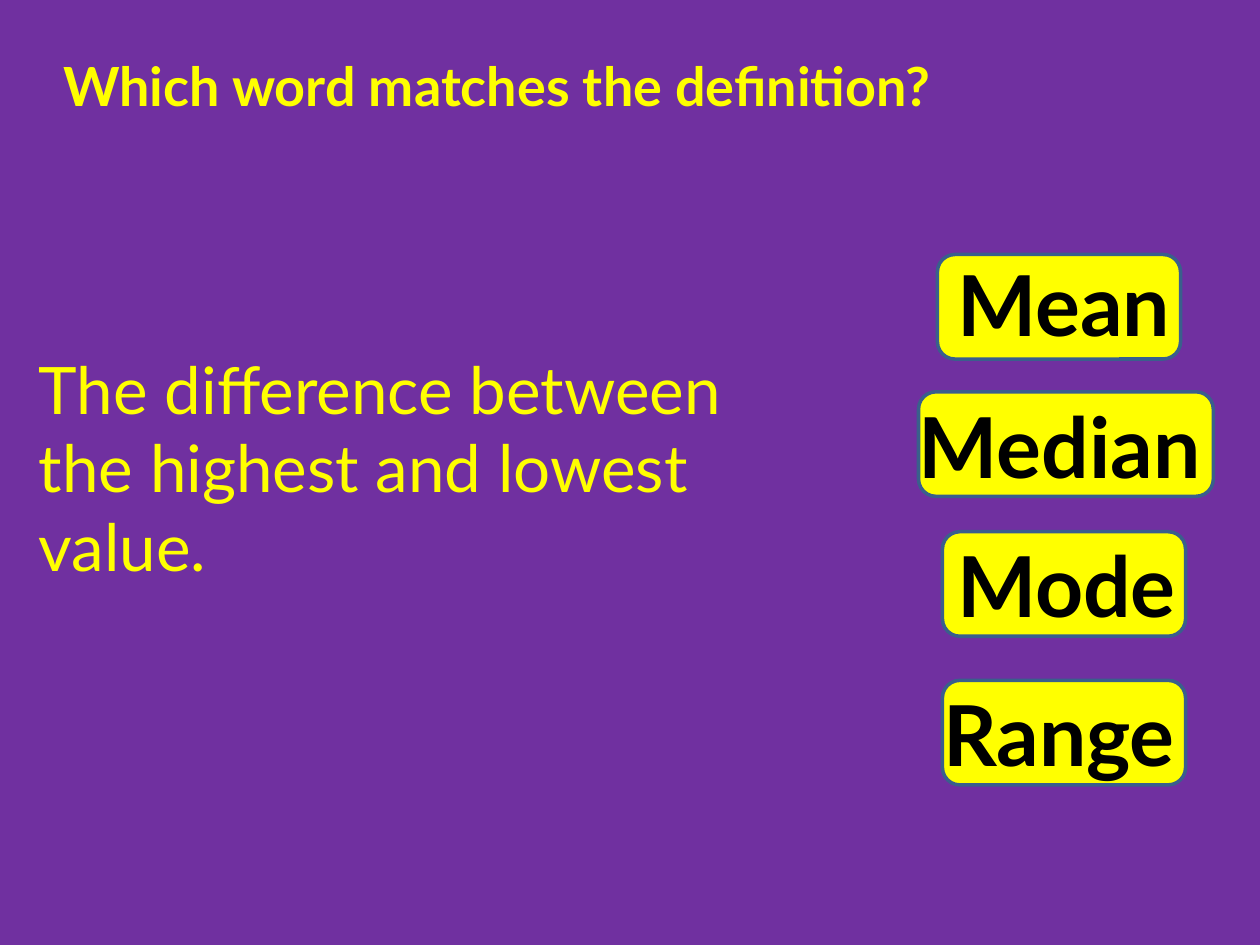
from dataclasses import dataclass

from pptx import Presentation
from pptx.dml.color import RGBColor
from pptx.enum.shapes import MSO_SHAPE
from pptx.enum.text import MSO_ANCHOR, MSO_AUTO_SIZE, PP_ALIGN
from pptx.util import Inches, Pt


@dataclass(frozen=True)
class Theme:
    font: str = "Lato"
    purple: RGBColor = RGBColor(0x70, 0x30, 0xA0)
    yellow: RGBColor = RGBColor(0xFF, 0xFF, 0x00)
    black: RGBColor = RGBColor(0x00, 0x00, 0x00)
    border: RGBColor = RGBColor(0x3A, 0x5F, 0x8C)
    border_width: float = 2
    title_size: float = 30.8
    definition_size: float = 37.4
    answer_size: float = 48


class QuizSlide:
    """Build a quiz slide on a grid of 100 columns and 75 rows."""

    columns, rows = 100, 75

    def __init__(self, presentation, theme):
        self.presentation = presentation
        self.theme = theme
        self.slide = presentation.slides.add_slide(presentation.slide_layouts[5])
        background = self.slide.background.fill
        background.solid()
        background.fore_color.rgb = theme.purple

    def place(self, left, top, width, height):
        column = self.presentation.slide_width / self.columns
        row = self.presentation.slide_height / self.rows
        return [round(length) for length in (left * column, top * row, width * column, height * row)]

    def set_text(self, shape, text, size, color, bold=False, alignment=PP_ALIGN.CENTER):
        frame = shape.text_frame
        frame_format = {
            "word_wrap": True,
            "auto_size": MSO_AUTO_SIZE.NONE,
            "vertical_anchor": MSO_ANCHOR.MIDDLE,
        }
        for name, value in frame_format.items():
            setattr(frame, name, value)
        paragraph = frame.paragraphs[0]
        paragraph.alignment = alignment
        run = paragraph.add_run()
        run.text = text
        run_format = {"name": self.theme.font, "size": Pt(size), "bold": bold}
        for name, value in run_format.items():
            setattr(run.font, name, value)
        run.font.color.rgb = color

    def title(self, text, *area):
        shape = self.slide.shapes.title
        for name, value in zip(("left", "top", "width", "height"), self.place(*area)):
            setattr(shape, name, value)
        self.set_text(shape, text, self.theme.title_size, self.theme.yellow, bold=True)

    def definition(self, text, *area):
        shape = self.slide.shapes.add_textbox(*self.place(*area))
        self.set_text(shape, text, self.theme.definition_size, self.theme.yellow, alignment=PP_ALIGN.LEFT)

    def answer(self, text, card_area, label_area):
        group = self.slide.shapes.add_group_shape()
        card = group.shapes.add_shape(MSO_SHAPE.ROUNDED_RECTANGLE, *self.place(*card_area))
        card.shadow.inherit = False
        card.fill.solid()
        card.fill.fore_color.rgb = self.theme.yellow
        card.line.color.rgb = self.theme.border
        card.line.width = Pt(self.theme.border_width)
        label = group.shapes.add_textbox(*self.place(*label_area))
        self.set_text(label, text, self.theme.answer_size, self.theme.black, bold=True)


def main():
    presentation = Presentation()
    presentation.slide_width, presentation.slide_height = Inches(10), Inches(7.5)
    quiz = QuizSlide(presentation, Theme())
    quiz.title("Which word matches the definition?", 2, 3.2, 74.9, 7.1)

    card_height, label_height = 8.3, 5.7
    answers = [
        ("Mean", 74.4, 20.2, 19.3, 73.1, 21.2, 22.7),
        ("Median", 72.9, 31.1, 23.4, 70.3, 32.5, 27.6),
        ("Mode", 74.8, 42.2, 19.3, 73.3, 43.5, 22.7),
        ("Range", 74.8, 54, 19.3, 72.7, 55.3, 22.7),
    ]
    for word, card_left, card_top, card_width, label_left, label_top, label_width in answers:
        quiz.answer(
            word,
            (card_left, card_top, card_width, card_height),
            (label_left, label_top, label_width, label_height),
        )

    quiz.definition("The difference between the highest and lowest value.", 2.1, 28.6, 57.9, 16.9)
    presentation.save("out.pptx")


if __name__ == "__main__":
    main()
